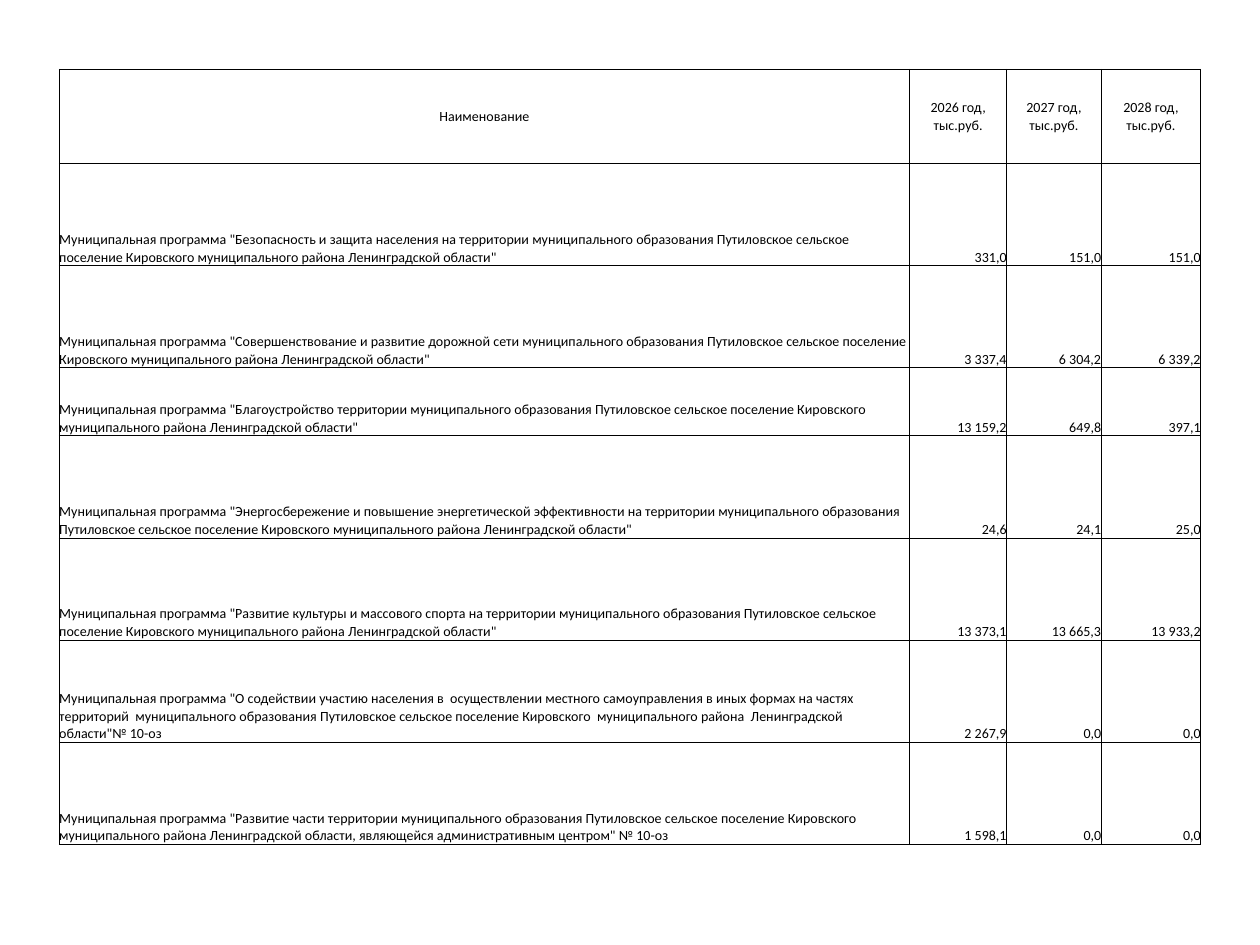
from lxml.etree import SubElement
from pptx import Presentation
from pptx.dml.color import RGBColor
from pptx.enum.text import MSO_ANCHOR as Anchor, PP_ALIGN as Align
from pptx.oxml.ns import qn
from pptx.util import Inches, Pt

COLORS = {"text": "000000", "border": "000000"}
FONT = "Calibri"

# Column widths and row heights in inches
COLUMN_WIDTHS = [6.75, 0.77, 0.75, 0.79]
HEADER_HEIGHT, PROGRAM_HEIGHT, SHORT_HEIGHT = 0.75, 0.81, 0.54
SHORT_PROGRAM = 2

HEADINGS = ["Наименование"] + [f"{year} год, тыс.руб." for year in (2026, 2027, 2028)]
REGION = "Кировского муниципального района Ленинградской области"
SETTLEMENT = f"муниципального образования Путиловское сельское поселение {REGION}"

# Program name, then the amounts for the three years
PROGRAMS = [
    (f'"Безопасность и защита населения на территории {SETTLEMENT}"',
     "331,0", "151,0", "151,0"),
    (f'"Совершенствование и развитие дорожной сети {SETTLEMENT}"',
     "3 337,4", "6 304,2", "6 339,2"),
    (f'"Благоустройство территории {SETTLEMENT}"',
     "13 159,2", "649,8", "397,1"),
    (f'"Энергосбережение и повышение энергетической эффективности на территории {SETTLEMENT}"',
     "24,6", "24,1", "25,0"),
    (f'"Развитие культуры и массового спорта на территории {SETTLEMENT}"',
     "13 373,1", "13 665,3", "13 933,2"),
    ('"О содействии участию населения в  осуществлении местного самоуправления '
     'в иных формах на частях территорий  муниципального образования Путиловское '
     'сельское поселение Кировского  муниципального района  Ленинградской области"№ 10-оз',
     "2 267,9", "0,0", "0,0"),
    (f'"Развитие части территории {SETTLEMENT}, являющейся административным центром" № 10-оз',
     "1 598,1", "0,0", "0,0"),
]


def add_borders(cell):
    properties = cell._tc.get_or_add_tcPr()
    for side in ("a:lnL", "a:lnR", "a:lnT", "a:lnB"):
        line = SubElement(properties, qn(side), w=str(Pt(0.5)))
        fill = SubElement(line, qn("a:solidFill"))
        SubElement(fill, qn("a:srgbClr"), val=COLORS["border"])


def fill_cell(cell, text, align, anchor):
    add_borders(cell)
    cell.fill.background()
    cell.margin_left = cell.margin_right = cell.margin_top = cell.margin_bottom = 0
    cell.vertical_anchor = anchor
    paragraph = cell.text_frame.paragraphs[0]
    paragraph.alignment = align
    run = paragraph.add_run()
    run.text = text
    run.font.name = FONT
    run.font.size = Pt(8)
    run.font.color.rgb = RGBColor.from_string(COLORS["text"])


def add_budget_table(slide):
    heights = [HEADER_HEIGHT] + [PROGRAM_HEIGHT] * len(PROGRAMS)
    heights[1 + SHORT_PROGRAM] = SHORT_HEIGHT
    budget = slide.shapes.add_table(
        len(heights), len(COLUMN_WIDTHS), Inches(0.47), Inches(0.55),
        Inches(sum(COLUMN_WIDTHS)), Inches(sum(heights))).table
    budget.first_row = budget.horz_banding = False
    for column, width in zip(budget.columns, COLUMN_WIDTHS):
        column.width = Inches(width)
    for row, height in zip(budget.rows, heights):
        row.height = Inches(height)

    # Header row
    for col, heading in enumerate(HEADINGS):
        fill_cell(budget.cell(0, col), heading, Align.CENTER, Anchor.MIDDLE)

    # Programs with their yearly amounts
    for row, (name, *amounts) in enumerate(PROGRAMS, start=1):
        fill_cell(budget.cell(row, 0), f"Муниципальная программа {name}",
                  Align.LEFT, Anchor.BOTTOM)
        for col, amount in enumerate(amounts, start=1):
            fill_cell(budget.cell(row, col), amount, Align.RIGHT, Anchor.BOTTOM)


def main():
    deck = Presentation()
    deck.slide_width, deck.slide_height = Inches(10), Inches(7.5)
    slide = deck.slides.add_slide(deck.slide_layouts[6])
    add_budget_table(slide)
    deck.save("out.pptx")


if __name__ == "__main__":
    main()
